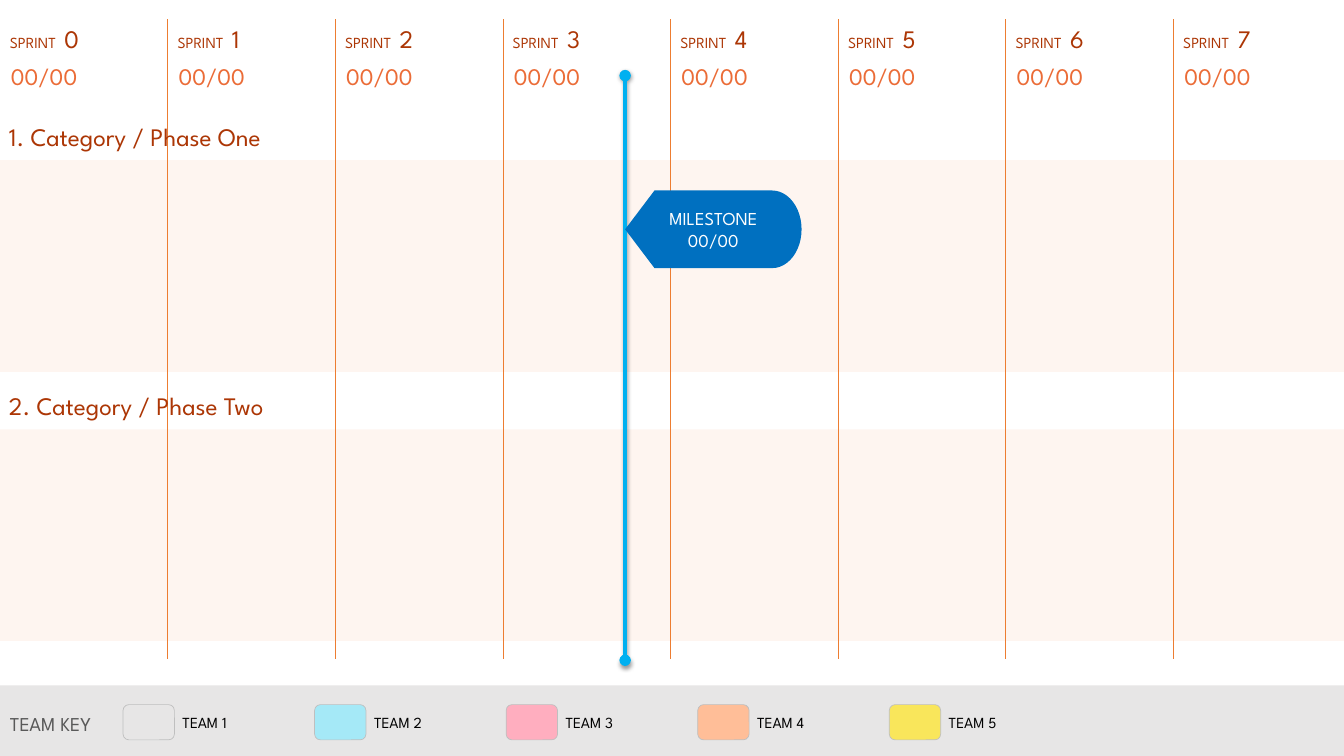
from lxml import etree
from pptx import Presentation, util as u
from pptx.dml.color import RGBColor
from pptx.enum import shapes, text
from pptx.oxml import ns

FONT = "League Spartan"
HUE = {
    "band": "FEF5F0", "rust": "AC3605", "coral": "EB6C37", "rule": "ED7D31",
    "bar": "E7E6E6", "key": "595959", "edge": "BFBFBF", "black": "000000",
    "white": "FFFFFF", "sky": "00B0F0", "flag": "0070C0",
}
TEAMS = ["E7E6E6", "A5E9F7", "FFAEBF", "FFBE98", "F9E65B"]
WIDE = 13.33
COLS = 8
STEP = 13.3 / COLS
PAD = (0.1, 0.05, 0.1, 0.05)
FLUSH = (0, 0, 0, 0)


def rgb(name):
    return RGBColor.from_string(HUE.get(name, name))


def add_run(para, words, size, hue):
    run = para.add_run()
    run.text = words
    run.font.name = FONT
    run.font.size = u.Pt(size)
    run.font.color.rgb = rgb(hue)


def set_pad(frame, pad):
    """Set the insets: left, top, right, bottom."""
    frame.margin_left, frame.margin_top, frame.margin_right, frame.margin_bottom = map(u.Inches, pad)


def add_text(slide, box, runs, hue, pad=PAD, mid=False, wrap=True):
    """Add one line of text; runs are (words, size) pairs."""
    frame = slide.shapes.add_textbox(*map(u.Inches, box)).text_frame
    frame.word_wrap = wrap
    if wrap:
        frame.auto_size = text.MSO_AUTO_SIZE.SHAPE_TO_FIT_TEXT
    set_pad(frame, pad)
    if mid:
        frame.vertical_anchor = text.MSO_ANCHOR.MIDDLE
    for words, size in runs:
        add_run(frame.paragraphs[0], words, size, hue)


def add_form(slide, kind, box, fill, edge=None):
    form = slide.shapes.add_shape(kind, *map(u.Inches, box))
    form.shadow.inherit = False
    form.fill.solid()
    form.fill.fore_color.rgb = rgb(fill)
    if edge:
        form.line.color.rgb = rgb(edge)
        form.line.width = u.Pt(0.5)
    else:
        form.line.fill.background()
    return form


def add_rule(slide, x, top, end, hue, width):
    """Add an upright line and return it with its empty effect list."""
    rule = slide.shapes.add_connector(
        shapes.MSO_CONNECTOR.STRAIGHT, *map(u.Inches, (x, top, x, end)))
    rule.line.color.rgb = rgb(hue)
    rule.line.width = u.Pt(width)
    fx = etree.SubElement(rule._element.spPr, ns.qn("a:effectLst"))
    return rule, fx


def add_sprint(slide, num):
    x = num * STEP
    if num:
        add_rule(slide, x, 0.19, 6.54, "rule", 0.5)
    add_text(slide, (x, 0.1, 1.67, 0.5),
             [("SPRINT", 11), (" ", 24), (str(num), 18)], "rust")
    add_text(slide, (x + 0.01, 0.61, 1.67, 0.29), [("00/00", 17)], "coral",
             (0.1, 0, 0, 0), True)


def add_key(slide):
    add_form(slide, shapes.MSO_SHAPE.RECTANGLE, (0, 6.8, WIDE, 0.7), "bar")
    add_text(slide, (0, 7.01, 1.11, 0.34), [("TEAM KEY", 14)], "key", wrap=False)
    for i, fill in enumerate(TEAMS):
        x = 1.22 + 1.9 * i
        add_form(slide, shapes.MSO_SHAPE.ROUNDED_RECTANGLE,
                 (x, 6.99, 0.51, 0.35), fill, "edge")
        add_text(slide, (x + 0.59, 7.02, 1.2, 0.29), [(f"TEAM {i + 1}", 11)],
                 "black", FLUSH, True, False)


def add_stone(slide):
    """Add the milestone line with its flag."""
    x = 6.2
    rule, fx = add_rule(slide, x, 0.75, 6.55, "sky", 2.75)
    line = rule.line._get_or_add_ln()
    for end in ("a:headEnd", "a:tailEnd"):
        etree.SubElement(line, ns.qn(end), type="oval")
    shade = etree.SubElement(
        fx, ns.qn("a:outerShdw"), blurRad=str(u.Pt(3.1)), dist=str(u.Pt(1.6)),
        dir="5400000", rotWithShape="0")
    tint = etree.SubElement(shade, ns.qn("a:srgbClr"), val=HUE["black"])
    etree.SubElement(tint, ns.qn("a:alpha"), val="38000")

    flag = add_form(slide, shapes.MSO_SHAPE.FLOWCHART_DISPLAY,
                    (x, 1.89, 1.75, 0.77), "flag")
    frame = flag.text_frame
    frame.word_wrap = True
    frame.vertical_anchor = text.MSO_ANCHOR.MIDDLE
    set_pad(frame, FLUSH)
    for i, words in enumerate(("MILESTONE", "00/00")):
        para = frame.add_paragraph() if i else frame.paragraphs[0]
        para.alignment = text.PP_ALIGN.CENTER
        add_run(para, words, 13, "white")


def main():
    deck = Presentation()
    deck.slide_width, deck.slide_height = u.Inches(WIDE), u.Inches(7.5)
    slide = deck.slides.add_slide(deck.slide_layouts[6])
    phases = [("1. Category / Phase One", 1.15, 1.59),
              ("2. Category / Phase Two", 3.82, 4.26)]
    for _, _, top in phases:
        add_form(slide, shapes.MSO_SHAPE.RECTANGLE, (0, top, WIDE, 2.1), "band")
    for num in range(COLS):
        add_sprint(slide, num)
    add_key(slide)
    for title, top, _ in phases:
        add_text(slide, (-0.01, top, 8, 0.4), [(title, 18)], "rust")
    add_stone(slide)
    deck.save("out.pptx")


if __name__ == "__main__":
    main()
